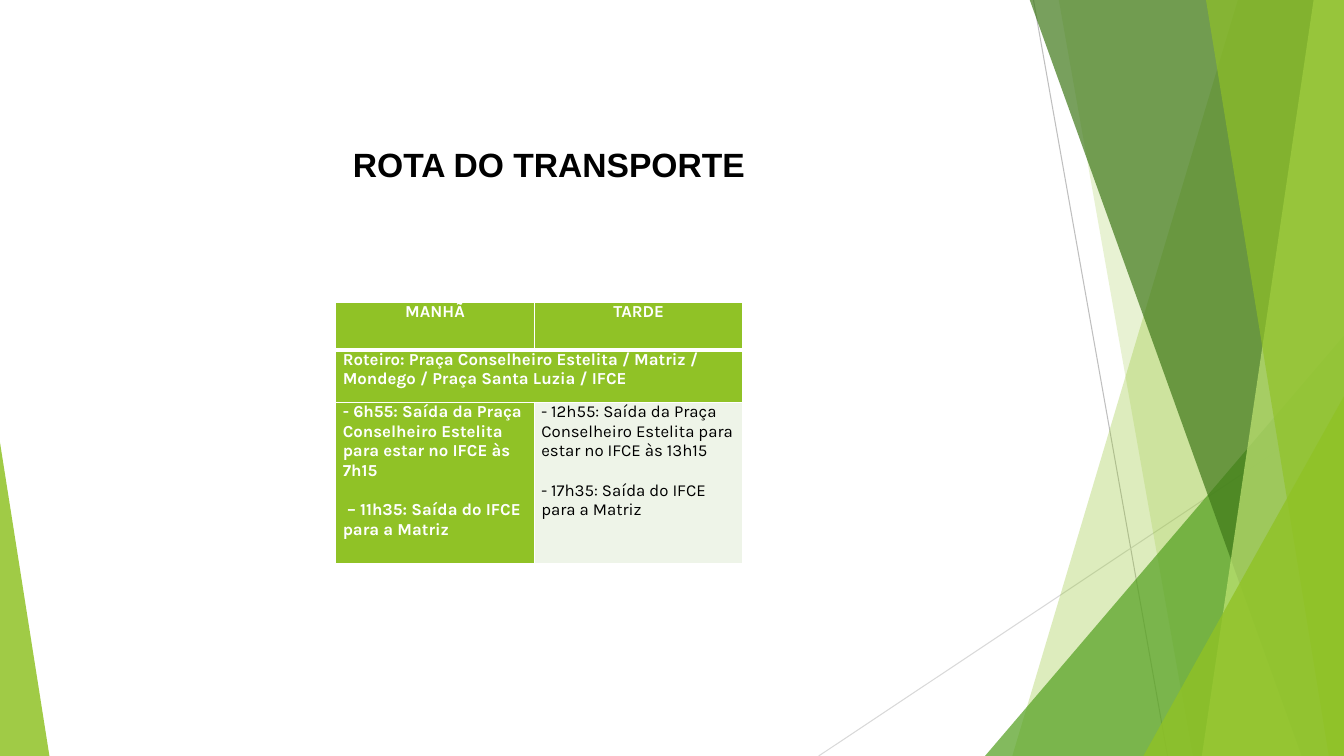
from dataclasses import dataclass

from lxml.etree import SubElement
from pptx import Presentation
from pptx.dml.color import RGBColor
from pptx.enum.shapes import MSO_CONNECTOR, MSO_SHAPE
from pptx.enum.text import MSO_ANCHOR, PP_ALIGN
from pptx.oxml.ns import qn
from pptx.util import Inches, Pt

WHITE = RGBColor(0xFF, 0xFF, 0xFF)
BLACK = RGBColor(0x00, 0x00, 0x00)
LIME = RGBColor(0x90, 0xC2, 0x26)
PALE_LIME = RGBColor(0xC0, 0xE4, 0x74)
GREEN = RGBColor(0x54, 0xA0, 0x21)
DARK_GREEN = RGBColor(0x3F, 0x78, 0x19)
PALE_GREEN = RGBColor(0xEE, 0xF4, 0xE8)
GREY = RGBColor(0xBF, 0xBF, 0xBF)
LIGHT_GREY = RGBColor(0xD9, 0xD9, 0xD9)

WIDTH, HEIGHT = 13.33, 7.5
TOP = -0.01


@dataclass
class Ray:
    start: tuple[float, float]
    end: tuple[float, float]
    color: RGBColor


@dataclass
class Band:
    """Slanted band that reaches the right edge of the page."""
    top_left: float
    bottom_left: float
    color: RGBColor
    opacity: int


@dataclass
class Spike:
    """Triangle that stands on the bottom edge of the page."""
    left: float
    top: float
    width: float
    apex: float
    color: RGBColor
    opacity: int


@dataclass
class RouteCell:
    row: int
    column: int
    paragraphs: list[str]
    align: PP_ALIGN = PP_ALIGN.LEFT
    fill: RGBColor = LIME
    color: RGBColor = WHITE
    bold: bool = True
    bottom_border: float = 1


RAYS = [
    Ray((10.25, 0), (11.58, HEIGHT), GREY),
    Ray((WIDTH, 4.03), (8.12, HEIGHT), LIGHT_GREY),
]

# From back to front
FACETS = [
    Band(12.28, 10.04, LIME, 30),
    Band(10.5, 11.83, LIME, 20),
    Spike(9.77, 3.33, 3.56, 1, GREEN, 72),
    Band(10.21, 12.91, DARK_GREEN, 70),
    Band(13.03, 11.92, PALE_LIME, 70),
    Band(11.96, 13.18, LIME, 65),
    Spike(11.34, 3.93, 1.99, 1, LIME, 80),
    Spike(0, 4.39, 0.49, 0, LIME, 85),
]

COLUMN_WIDTHS = [1.97, 2.07]
ROW_HEIGHTS = [0.47, 0.52, 1.6]
ROUTE_CELLS = [
    RouteCell(0, 0, ["MANHÃ"], PP_ALIGN.CENTER, bottom_border=3),
    RouteCell(0, 1, ["TARDE"], PP_ALIGN.CENTER, bottom_border=3),
    RouteCell(1, 0, ["Roteiro: Praça Conselheiro Estelita / Matriz / "
                     "Mondego / Praça Santa Luzia / IFCE"]),
    RouteCell(1, 1, []),
    RouteCell(2, 0, ["- 6h55: Saída da Praça Conselheiro Estelita para estar no IFCE às 7h15",
                     " – 11h35: Saída do IFCE para a Matriz"]),
    RouteCell(2, 1, ["- 12h55: Saída da Praça Conselheiro Estelita para estar no IFCE às 13h15",
                     "- 17h35: Saída do IFCE para a Matriz"],
              fill=PALE_GREEN, color=BLACK, bold=False),
]


def add_ray(page, ray: Ray) -> None:
    points = [Inches(value) for value in (*ray.start, *ray.end)]
    line = page.shapes.add_connector(MSO_CONNECTOR.STRAIGHT, *points)
    line.line.color.rgb = ray.color
    line.line.width = Pt(0.75)
    SubElement(line._element.spPr, qn("a:effectLst"))


def add_facet(page, facet: Band | Spike) -> None:
    if isinstance(facet, Band):
        corners = [(facet.top_left, TOP), (WIDTH, TOP),
                   (WIDTH, HEIGHT), (facet.bottom_left, HEIGHT)]
        points = [(Inches(x), Inches(y)) for x, y in corners]
        builder = page.shapes.build_freeform(*points[0])
        builder.add_line_segments(points[1:], close=True)
        shape = builder.convert_to_shape()
    else:
        shape = page.shapes.add_shape(
            MSO_SHAPE.ISOSCELES_TRIANGLE, Inches(facet.left), Inches(facet.top),
            Inches(facet.width), Inches(HEIGHT - facet.top))
        shape.adjustments[0] = facet.apex
    shape.shadow.inherit = False
    shape.line.fill.background()
    shape.fill.solid()
    shape.fill.fore_color.rgb = facet.color
    color = shape._element.spPr.find(qn("a:solidFill"))[0]
    SubElement(color, qn("a:alpha"), val=str(facet.opacity * 1000))


def add_span(para, text: str, font: str, size: float, color: RGBColor, bold: bool) -> None:
    span = para.add_run()
    span.text = text
    span.font.name = font
    span.font.size = Pt(size)
    span.font.color.rgb = color
    span.font.bold = bold


def add_title(page, text: str) -> None:
    box = page.shapes.add_textbox(Inches(3.38), Inches(1.38), Inches(4.13), Inches(0.5))
    frame = box.text_frame
    frame.word_wrap = False
    frame.vertical_anchor = MSO_ANCHOR.MIDDLE
    para = frame.paragraphs[0]
    para.alignment = PP_ALIGN.CENTER
    add_span(para, text, "Arial", 24, BLACK, True)


def set_borders(cell, bottom: float) -> None:
    properties = cell._tc.get_or_add_tcPr()
    sides = {"a:lnL": 1, "a:lnR": 1, "a:lnT": 1, "a:lnB": bottom}
    for index, (tag, width) in enumerate(sides.items()):
        line = SubElement(properties, qn(tag), w=str(Pt(width)))
        fill = SubElement(line, qn("a:solidFill"))
        SubElement(fill, qn("a:srgbClr"), val=str(WHITE))
        properties.insert(index, line)


def fill_cell(cell, content: RouteCell) -> None:
    cell.margin_left = cell.margin_right = Inches(0.07)
    cell.margin_top = cell.margin_bottom = 0
    cell.fill.solid()
    cell.fill.fore_color.rgb = content.fill
    set_borders(cell, content.bottom_border)
    frame = cell.text_frame
    for index, text in enumerate(content.paragraphs):
        para = frame.add_paragraph() if index else frame.paragraphs[0]
        para.alignment = content.align
        para.space_before = Pt(14 if index else 0)
        add_span(para, text, "Karla", 12, content.color, content.bold)


def add_route_table(page) -> None:
    table = page.shapes.add_table(
        len(ROW_HEIGHTS), len(COLUMN_WIDTHS), Inches(3.33), Inches(3),
        Inches(sum(COLUMN_WIDTHS)), Inches(sum(ROW_HEIGHTS))).table
    table.horz_banding = False
    for column, width in zip(table.columns, COLUMN_WIDTHS):
        column.width = Inches(width)
    for row, height in zip(table.rows, ROW_HEIGHTS):
        row.height = Inches(height)
    table.cell(1, 0).merge(table.cell(1, 1))
    for content in ROUTE_CELLS:
        fill_cell(table.cell(content.row, content.column), content)


def main() -> None:
    deck = Presentation()
    deck.slide_width, deck.slide_height = Inches(WIDTH), Inches(HEIGHT)
    page = deck.slides.add_slide(deck.slide_layouts[6])

    # Green backdrop
    for ray in RAYS:
        add_ray(page, ray)
    for facet in FACETS:
        add_facet(page, facet)

    # Title and timetable
    add_title(page, "ROTA DO TRANSPORTE")
    add_route_table(page)
    deck.save("out.pptx")


if __name__ == "__main__":
    main()
